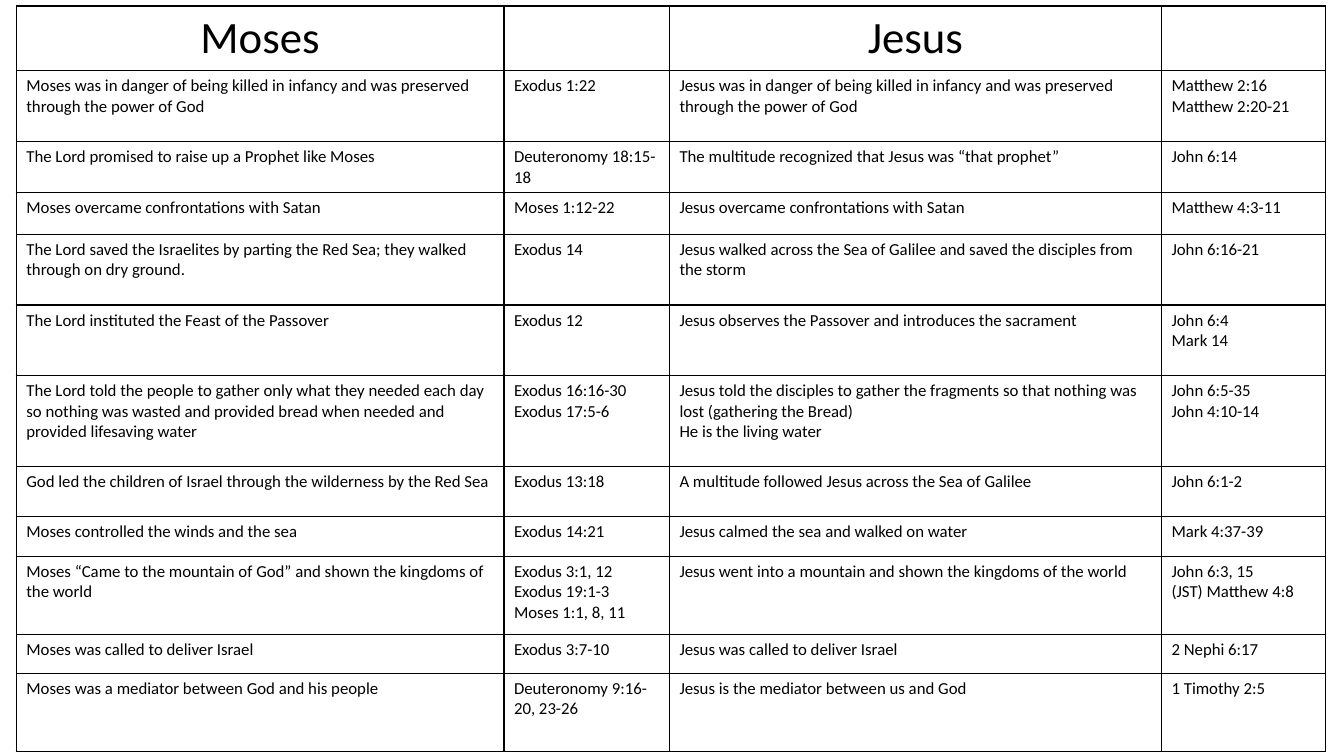
import pptx
import pptx.dml.color
import pptx.enum.text
import pptx.oxml
import pptx.oxml.ns
import pptx.util

Cm = pptx.util.Cm
BLACK = pptx.dml.color.RGBColor(0x00, 0x00, 0x00)
WHITE = pptx.dml.color.RGBColor(0xFF, 0xFF, 0xFF)
FONT = "Calibri"
COLUMN_WIDTHS = [12.29, 4.17, 12.4, 4.14]
ROW_HEIGHTS = [1.6, 1.79, 1.26, 1.05, 1.78, 1.78, 2.29, 1.26, 1.01, 1.97, 0.98, 1.97]

HEADINGS = ["Moses", "", "Jesus", ""]
COMPARISONS = [
    ["Moses was in danger of being killed in infancy and was preserved through the power of God",
     "Exodus 1:22",
     "Jesus was in danger of being killed in infancy and was preserved through the power of God",
     "Matthew 2:16\nMatthew 2:20-21"],
    ["The Lord promised to raise up a Prophet like Moses", "Deuteronomy 18:15-18",
     "The multitude recognized that Jesus was “that prophet”", "John 6:14"],
    ["Moses overcame confrontations with Satan", "Moses 1:12-22",
     "Jesus overcame confrontations with Satan", "Matthew 4:3-11"],
    ["The Lord saved the Israelites by parting the Red Sea; they walked through on dry ground.",
     "Exodus 14",
     "Jesus walked across the Sea of Galilee and saved the disciples from the storm",
     "John 6:16-21"],
    ["The Lord instituted the Feast of the Passover", "Exodus 12",
     "Jesus observes the Passover and introduces the sacrament", "John 6:4\nMark 14"],
    ["The Lord told the people to gather only what they needed each day so nothing was wasted "
     "and provided bread when needed and provided lifesaving water",
     "Exodus 16:16-30\nExodus 17:5-6",
     "Jesus told the disciples to gather the fragments so that nothing was lost "
     "(gathering the Bread)\nHe is the living water",
     "John 6:5-35\nJohn 4:10-14"],
    ["God led the children of Israel through the wilderness by the Red Sea", "Exodus 13:18",
     "A multitude followed Jesus across the Sea of Galilee", "John 6:1-2"],
    ["Moses controlled the winds and the sea", "Exodus 14:21",
     "Jesus calmed the sea and walked on water", "Mark 4:37-39"],
    ["Moses “Came to the mountain of God” and shown the kingdoms of the world",
     "Exodus 3:1, 12\nExodus 19:1-3\nMoses 1:1, 8, 11",
     "Jesus went into a mountain and shown the kingdoms of the world",
     "John 6:3, 15\n(JST) Matthew 4:8"],
    ["Moses was called to deliver Israel", "Exodus 3:7-10",
     "Jesus was called to deliver Israel", "2 Nephi 6:17"],
    ["Moses was a mediator between God and his people", "Deuteronomy 9:16-20, 23-26",
     "Jesus is the mediator between us and God", "1 Timothy 2:5"],
]


def add_borders(cell):
    properties = cell._tc.get_or_add_tcPr()
    for side in ("lnL", "lnR", "lnT", "lnB"):
        properties.append(pptx.oxml.parse_xml(
            f'<a:{side} {pptx.oxml.ns.nsdecls("a")} w="{pptx.util.Pt(1)}">'
            f'<a:solidFill><a:srgbClr val="{BLACK}"/></a:solidFill></a:{side}>'))


def fill_cell(cell, text, size, alignment):
    add_borders(cell)
    cell.fill.solid()
    cell.fill.fore_color.rgb = WHITE
    cell.text = text
    for para in cell.text_frame.paragraphs:
        para.alignment = alignment
        para.font.name = FONT
        para.font.size = pptx.util.Pt(size)
        para.font.bold = False
        para.font.color.rgb = BLACK


def add_comparison_table(page, left, top, width, height):
    rows = [HEADINGS] + COMPARISONS
    table = page.shapes.add_table(len(rows), len(HEADINGS), left, top, width, height).table
    table.first_row = False
    table.horz_banding = False
    for column, share in zip(table.columns, COLUMN_WIDTHS):
        column.width = int(width * share / sum(COLUMN_WIDTHS))
    for row, share in zip(table.rows, ROW_HEIGHTS):
        row.height = int(height * share / sum(ROW_HEIGHTS))
    for row_index, texts in enumerate(rows):
        heading = row_index == 0
        size = 32 if heading else 12
        alignment = pptx.enum.text.PP_ALIGN.CENTER if heading else pptx.enum.text.PP_ALIGN.LEFT
        for column_index, text in enumerate(texts):
            fill_cell(table.cell(row_index, column_index), text, size, alignment)


def main():
    deck = pptx.Presentation()
    deck.slide_width = Cm(33.87)
    deck.slide_height = Cm(19.05)
    page = deck.slides.add_slide(deck.slide_layouts[6])
    add_comparison_table(page, Cm(0.41), Cm(0.15), Cm(33), Cm(18.72))
    deck.save("out.pptx")


if __name__ == "__main__":
    main()
